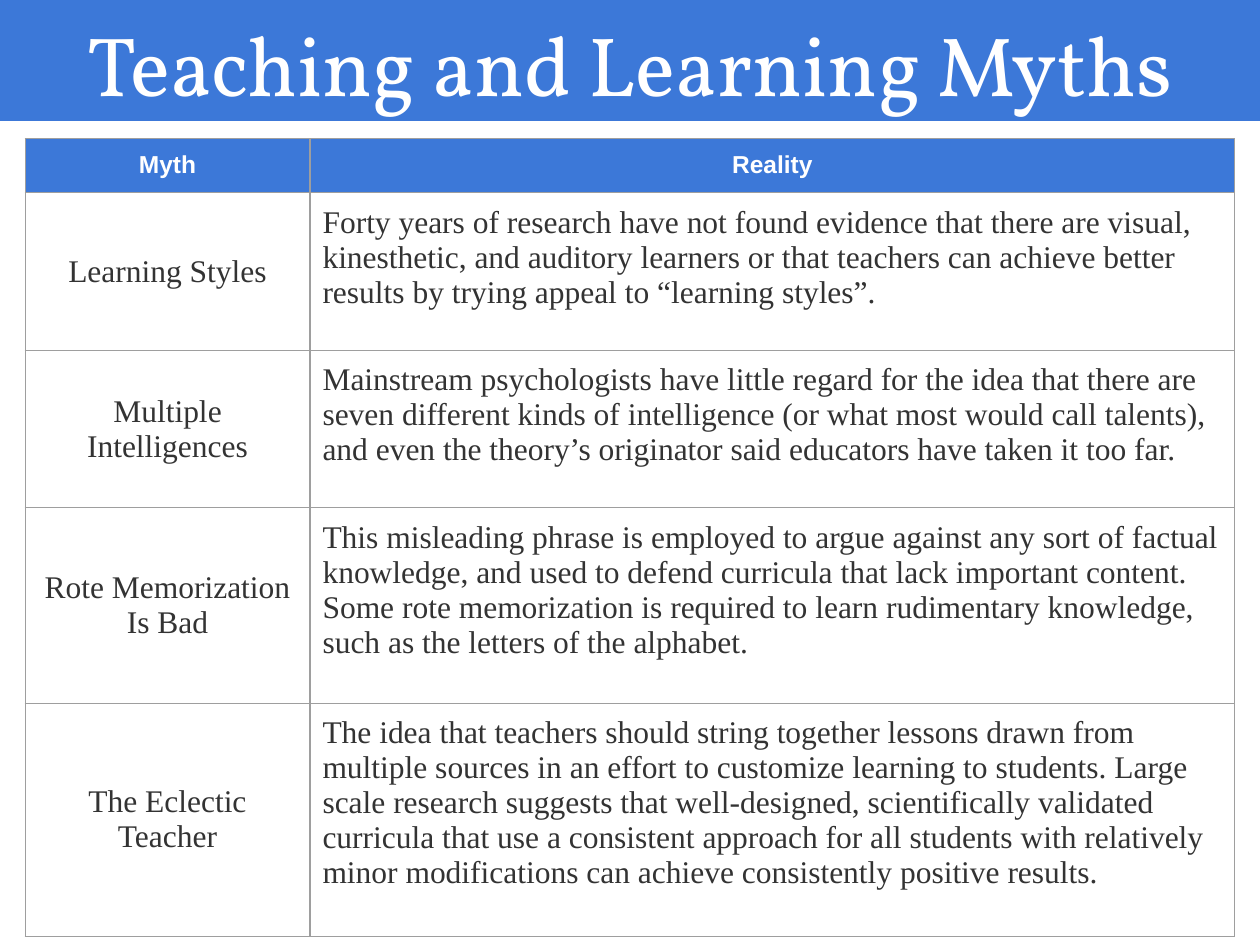
import pptx
import pptx.util
import pptx.dml.color
import pptx.enum.shapes
import pptx.enum.text
import pptx.oxml
import pptx.oxml.ns

Inches = pptx.util.Inches
Pt = pptx.util.Pt
Align = pptx.enum.text.PP_ALIGN
Anchor = pptx.enum.text.MSO_ANCHOR

BLUE = pptx.dml.color.RGBColor(0x3C, 0x78, 0xD8)
WHITE = pptx.dml.color.RGBColor(0xFF, 0xFF, 0xFF)
INK = pptx.dml.color.RGBColor(0x33, 0x33, 0x33)
RULE = pptx.dml.color.RGBColor(0x9E, 0x9E, 0x9E)

WIDTH, HEIGHT = 10, 7.5
MARGIN = 0.02 * WIDTH
INSET = Inches(0.1)
COLUMN_WIDTHS = (2.26, 7.34)
ROW_HEIGHTS = (0.43, 1.25, 1.25, 1.55, 1.85)

HEADINGS = ("Myth", "Reality")
MYTHS = (
    ("Learning Styles",
     "Forty years of research have not found evidence that there are visual, "
     "kinesthetic, and auditory learners or that teachers can achieve better "
     "results by trying appeal to “learning styles”."),
    ("Multiple Intelligences",
     "Mainstream psychologists have little regard for the idea that there are "
     "seven different kinds of intelligence (or what most would call talents), "
     "and even the theory’s originator said educators have taken it too far."),
    ("Rote Memorization Is Bad",
     "This misleading phrase is employed to argue against any sort of factual "
     "knowledge, and used to defend curricula that lack important content. "
     "Some rote memorization is required to learn rudimentary knowledge, "
     "such as the letters of the alphabet."),
    ("The Eclectic Teacher",
     "The idea that teachers should string together lessons drawn from "
     "multiple sources in an effort to customize learning to students. Large "
     "scale research suggests that well-designed, scientifically validated "
     "curricula that use a consistent approach for all students with relatively "
     "minor modifications can achieve consistently positive results."),
)


def write(frame, text, font, size, color, align, bold=False):
    frame.text = text
    para = frame.paragraphs[0]
    para.alignment = align
    span = para.runs[0]
    span.font.name = font
    span.font.size = Pt(size)
    span.font.bold = bold
    span.font.color.rgb = color
    return para


def set_insets(holder):
    holder.margin_left = holder.margin_right = INSET
    holder.margin_top = holder.margin_bottom = INSET


def draw_borders(cell):
    properties = cell._tc.get_or_add_tcPr()
    for position, side in enumerate(("lnL", "lnR", "lnT", "lnB")):
        line = pptx.oxml.parse_xml(
            f'<a:{side} {pptx.oxml.ns.nsdecls("a")} w="{Pt(0.75)}">'
            f'<a:solidFill><a:srgbClr val="{RULE}"/></a:solidFill></a:{side}>')
        properties.insert(position, line)


def add_banner(page, box):
    banner = page.shapes.add_shape(
        pptx.enum.shapes.MSO_SHAPE.RECTANGLE, *map(Inches, box))
    banner.shadow.inherit = False
    banner.fill.solid()
    banner.fill.fore_color.rgb = BLUE
    banner.line.fill.background()
    frame = banner.text_frame
    frame.word_wrap = True
    frame.vertical_anchor = Anchor.TOP
    set_insets(frame)
    write(frame, "Teaching and Learning Myths", "Vollkorn", 48, WHITE, Align.CENTER)


def add_myth_table(page, box):
    rows = (HEADINGS,) + MYTHS
    table = page.shapes.add_table(
        len(rows), len(HEADINGS), *map(Inches, box)).table
    table.horz_banding = False
    for column, width in zip(table.columns, COLUMN_WIDTHS):
        column.width = Inches(width)
    for row, height in zip(table.rows, ROW_HEIGHTS):
        row.height = Inches(height)
    for row_index, texts in enumerate(rows):
        for column_index, text in enumerate(texts):
            cell = table.cell(row_index, column_index)
            set_insets(cell)
            if row_index == 0:
                cell.fill.solid()
                cell.fill.fore_color.rgb = BLUE
                write(cell.text_frame, text, "Arial", 14, WHITE, Align.CENTER, True)
            else:
                is_myth = column_index == 0
                cell.fill.background()
                cell.vertical_anchor = Anchor.MIDDLE if is_myth else Anchor.TOP
                para = write(cell.text_frame, text, "Times New Roman", 18, INK,
                             Align.CENTER if is_myth else Align.LEFT)
                if not is_myth:
                    para.space_before = Pt(10.5)
            draw_borders(cell)


def main():
    deck = pptx.Presentation()
    deck.slide_width = Inches(WIDTH)
    deck.slide_height = Inches(HEIGHT)
    page = deck.slides.add_slide(deck.slide_layouts[6])
    add_banner(page, (0, 0, WIDTH, 0.96))
    add_myth_table(page, (MARGIN, 1.1, sum(COLUMN_WIDTHS), sum(ROW_HEIGHTS)))
    deck.save("out.pptx")


if __name__ == "__main__":
    main()
